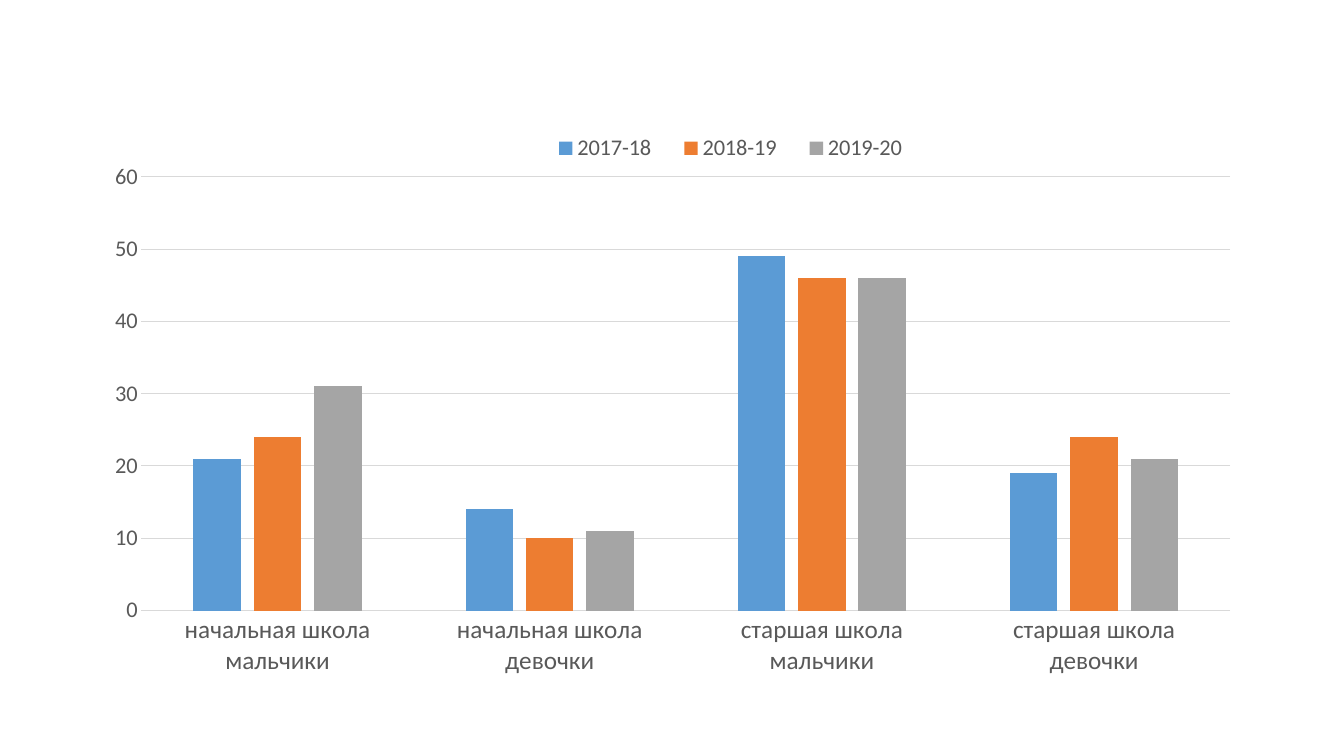
from dataclasses import dataclass
from itertools import product

import pptx
import pptx.chart.data
import pptx.dml.color
import pptx.enum.chart
import pptx.oxml
import pptx.oxml.ns
import pptx.util
from pptx.util import Inches


@dataclass(frozen=True)
class Theme:
    font: str = "Calibri"
    text: str = "595959"
    grid: str = "D9D9D9"
    bars: tuple = ("5B9BD5", "ED7D31", "A5A5A5")
    small: int = 16
    large: int = 18
    line: float = 0.75


THEME = Theme()
SCHOOLS = ("начальная школа", "старшая школа")
GROUPS = ("мальчики", "девочки")
YEARS = {
    "2017-18": (21, 14, 49, 19),
    "2018-19": (24, 10, 46, 24),
    "2019-20": (31, 11, 46, 21),
}


def color(code):
    return pptx.dml.color.RGBColor.from_string(code)


def set_font(font, size):
    font.name = THEME.font
    font.size = pptx.util.Pt(size)
    font.color.rgb = color(THEME.text)


def set_line(line):
    line.color.rgb = color(THEME.grid)
    line.width = pptx.util.Pt(THEME.line)


def place(parent, index, box, inner=False):
    for old in parent.findall(pptx.oxml.ns.qn("c:layout")):
        parent.remove(old)
    target = '<c:layoutTarget val="inner"/>' if inner else ""
    modes = "".join(f'<c:{side}Mode val="edge"/>' for side in "xy")
    sizes = "".join(f'<c:{side} val="{size}"/>' for side, size in zip("xywh", box))
    layout = pptx.oxml.parse_xml(
        f'<c:layout {pptx.oxml.ns.nsdecls("c")}><c:manualLayout>'
        f"{target}{modes}{sizes}</c:manualLayout></c:layout>"
    )
    parent.insert(index, layout)


def add_bars(slide):
    data = pptx.chart.data.CategoryChartData()
    data.categories = [f"{school}\n{group}" for school, group in product(SCHOOLS, GROUPS)]
    for year, counts in YEARS.items():
        data.add_series(year, counts)
    chart = slide.shapes.add_chart(
        pptx.enum.chart.XL_CHART_TYPE.COLUMN_CLUSTERED,
        Inches(0.92), Inches(1.2), Inches(11.5), Inches(6.02), data,
    ).chart
    chart.has_title = False
    set_font(chart.font, THEME.small)
    plot = chart.plots[0]
    plot.gap_width = 219
    plot.overlap = -27
    plot.vary_by_categories = False
    for series, code in zip(plot.series, THEME.bars):
        series.format.fill.solid()
        series.format.fill.fore_color.rgb = color(code)
    return chart


def style_axes(chart):
    none = pptx.enum.chart.XL_TICK_MARK.NONE
    for axis, size in ((chart.category_axis, THEME.large), (chart.value_axis, THEME.small)):
        axis.major_tick_mark = axis.minor_tick_mark = none
        set_font(axis.tick_labels.font, size)
    set_line(chart.category_axis.format.line)
    value = chart.value_axis
    value.minimum_scale, value.maximum_scale, value.major_unit = 0, 60, 10
    value.format.line.fill.background()
    value.has_major_gridlines = True
    set_line(value.major_gridlines.format.line)


def add_legend(chart):
    chart.has_legend = True
    legend = chart.legend
    legend.position = pptx.enum.chart.XL_LEGEND_POSITION.BOTTOM
    legend.include_in_layout = False
    set_font(legend.font, THEME.small)
    place(legend._element, 1, (0.38, 0.02, 0.34, 0.05))


def main():
    deck = pptx.Presentation()
    deck.slide_width, deck.slide_height = Inches(13.33), Inches(7.5)
    slide = deck.slides.add_slide(deck.slide_layouts[6])
    chart = add_bars(slide)
    style_axes(chart)
    add_legend(chart)
    area = chart._chartSpace.chart.plotArea
    place(area, 0, (0.042, 0.092, 0.939, 0.715), inner=True)
    deck.save("out.pptx")


if __name__ == "__main__":
    main()
